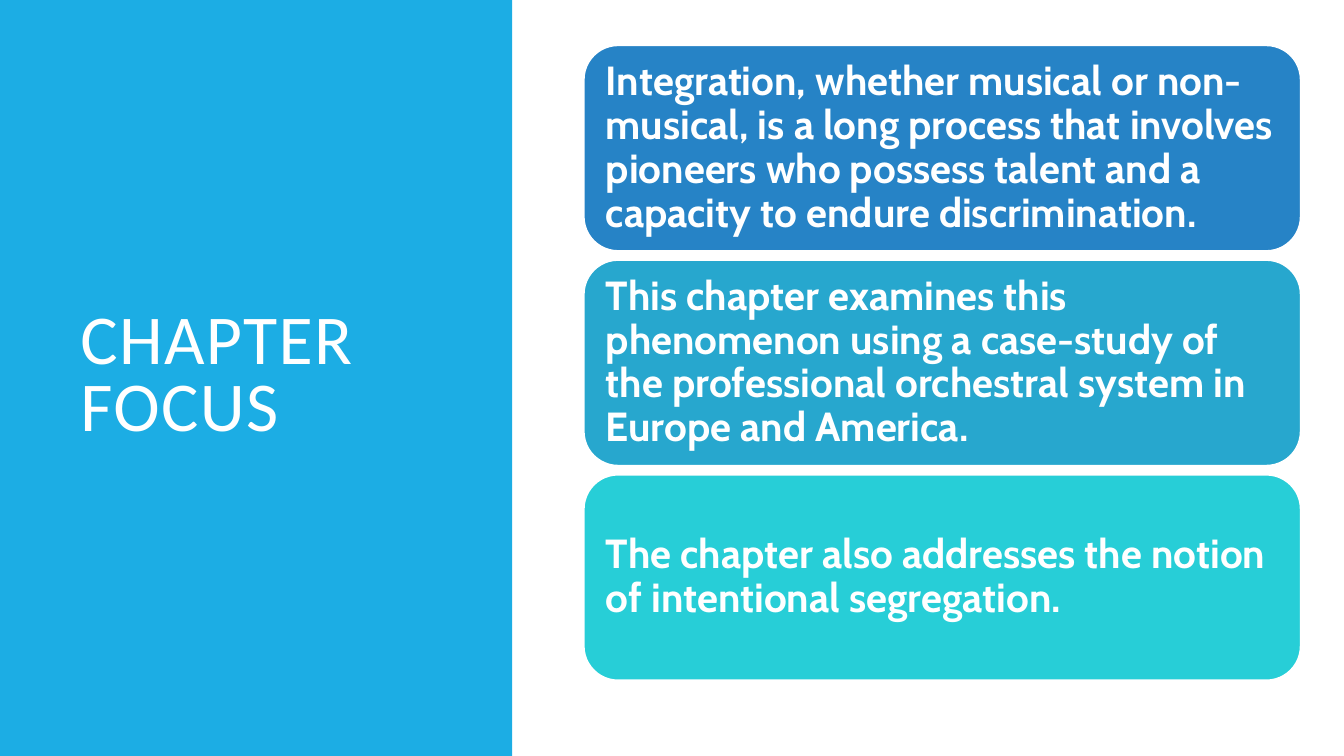
from pptx import Presentation
from pptx.dml.color import RGBColor
from pptx.enum.shapes import MSO_SHAPE
from pptx.enum.text import MSO_ANCHOR, PP_ALIGN
from pptx.util import Inches, Pt

RECTANGLE = MSO_SHAPE.RECTANGLE
ROUNDED = MSO_SHAPE.ROUNDED_RECTANGLE
MIDDLE = MSO_ANCHOR.MIDDLE
LEFT = PP_ALIGN.LEFT
WHITE = "FFFFFF"


def paint(color_format, color):
    color_format.rgb = RGBColor.from_string(color)


def write(box, text, font, size, line_spacing, inset_x, inset_y, bold=False, tracking=0):
    frame = box.text_frame
    frame.word_wrap = True
    frame.vertical_anchor = MIDDLE
    frame.margin_left = frame.margin_right = Inches(inset_x)
    frame.margin_top = frame.margin_bottom = Inches(inset_y)
    para = frame.paragraphs[0]
    para.alignment = LEFT
    para.line_spacing = line_spacing
    span = para.add_run()
    span.text = text
    span.font.name = font
    span.font.size = Pt(size)
    span.font.bold = bold
    paint(span.font.color, WHITE)
    if tracking:
        span.font._element.set("spc", str(tracking * 100))


deck = Presentation()
deck.slide_width = Inches(13.33)
deck.slide_height = Inches(7.5)
page = deck.slides.add_slide(deck.slide_layouts[6])

panel = page.shapes.add_shape(RECTANGLE, 0, 0, Inches(5.08), Inches(7.5))
panel.shadow.inherit = False
panel.fill.solid()
paint(panel.fill.fore_color, "1CADE4")
panel.line.fill.background()

title = page.shapes.add_textbox(Inches(0.7), Inches(0.7), Inches(3.74), Inches(6.09))
write(title, "CHAPTER FOCUS", font="Calibri", size=50, line_spacing=0.8,
      inset_x=0.1, inset_y=0.05, tracking=1)

focus_points = [
    ("2683C6", "Integration, whether musical or non-musical, is a long process that "
               "involves pioneers who possess talent and a capacity to endure discrimination."),
    ("27A7CE", "This chapter examines this phenomenon using a case-study of the "
               "professional orchestral system in Europe and America."),
    ("27CED7", "The chapter also addresses the notion of intentional segregation."),
]
card_top = 0.45
card_pitch = 2.13

for index, (color, text) in enumerate(focus_points):
    card = page.shapes.add_shape(ROUNDED, Inches(5.79), Inches(card_top + index * card_pitch),
                                 Inches(7.11), Inches(2.04))
    card.shadow.inherit = False
    card.fill.solid()
    paint(card.fill.fore_color, color)
    paint(card.line.color, WHITE)
    card.line.width = Pt(1.25)
    write(card, text, font="Cabin", size=29, line_spacing=0.9,
          inset_x=0.12, inset_y=0.12, bold=True)

deck.save("out.pptx")
